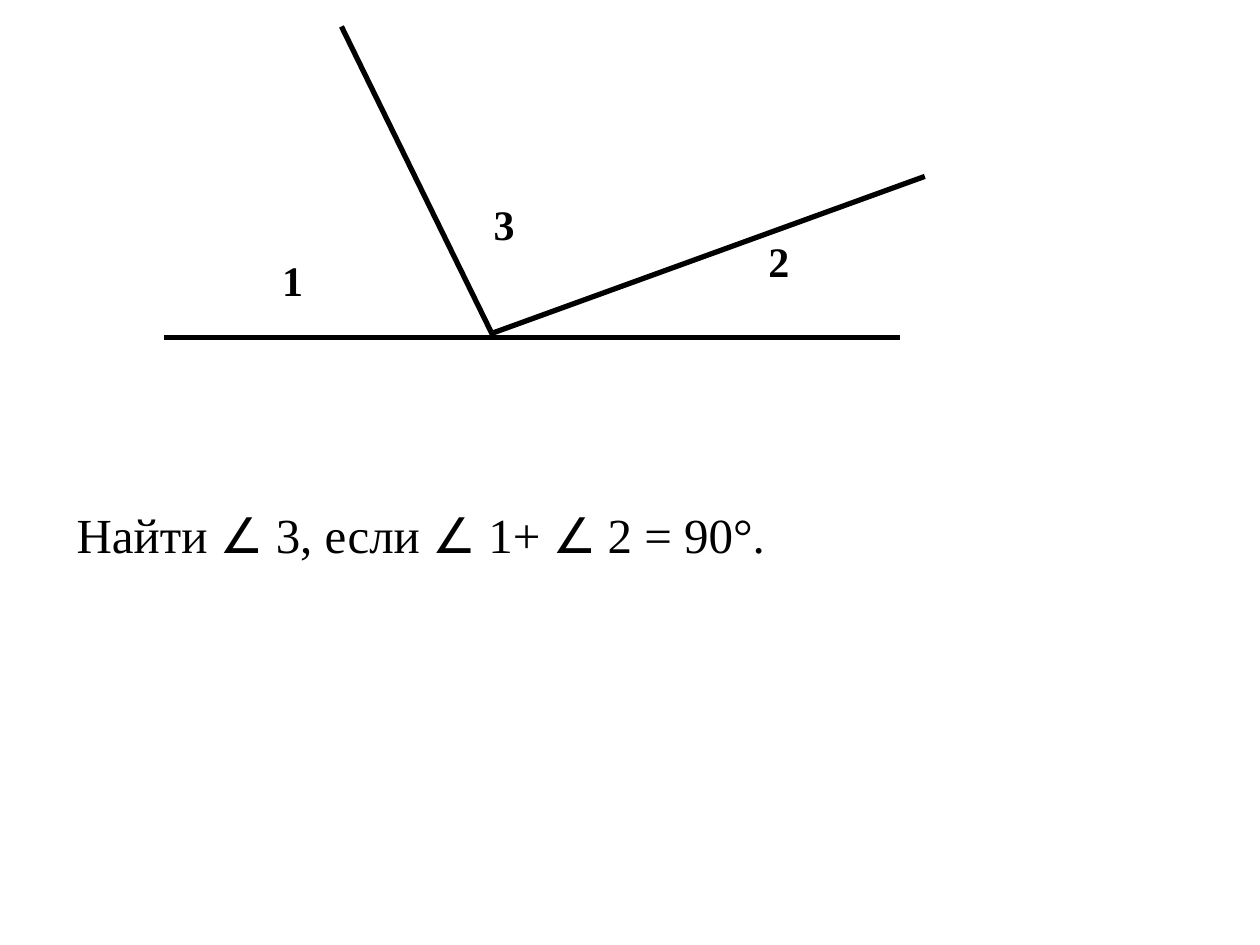
"""Builds a geometry slide: three angles on a straight line and a task."""
import pptx
import pptx.dml.color
import pptx.enum.shapes
import pptx.enum.text
import pptx.oxml.ns
import pptx.util
from lxml import etree

BLACK = pptx.dml.color.RGBColor(0, 0, 0)
WHITE = pptx.dml.color.RGBColor(255, 255, 255)
SERIF, SANS = "Times New Roman", "Calibri"

RAYS = [
    ((1.3, 2.68), (7.14, 2.68)),
    ((3.92, 2.68), (2.71, 0.21)),
    ((3.92, 2.64), (7.34, 1.4)),
]
ANGLES = [
    ("1", (2.14, 1.97, 1.34, 1.1)),
    ("3", (3.82, 1.53, 1.34, 0.5)),
    ("2", (6, 1.82, 1.68, 0.5)),
]
TASK = ["Найти ", "∠", " 3, если ", "∠", " 1+ ", "∠ ", "2 = 90°."]
TASK_PLACE = (0.51, 3.95, 5.71, 0.57)


def inches(values):
    return [pptx.util.Inches(value) for value in values]


def add_ray(shapes, start, end):
    ray = shapes.add_connector(
        pptx.enum.shapes.MSO_CONNECTOR.STRAIGHT, *inches(start + end))
    ray.line.color.rgb = BLACK
    ray.line.width = pptx.util.Pt(3)
    properties = ray._element.spPr
    etree.SubElement(properties, pptx.oxml.ns.qn("a:effectLst"))


def add_text(shapes, place, spans, size, wrap=True, bold=False):
    box = shapes.add_textbox(*inches(place))
    frame = box.text_frame
    frame.word_wrap = wrap
    frame.auto_size = pptx.enum.text.MSO_AUTO_SIZE.SHAPE_TO_FIT_TEXT
    para = frame.paragraphs[0]
    para.font.size = pptx.util.Pt(size)
    para.font.bold = bold
    para.font.name = SERIF
    para.font.color.rgb = BLACK
    for text in spans:
        span = para.add_run()
        span.text = text
        if "∠" in text:
            span.font.name = SANS
            span.font.italic = True
    return box


def main():
    deck = pptx.Presentation()
    deck.slide_width, deck.slide_height = inches((10, 7.5))
    page = deck.slides.add_slide(deck.slide_layouts[6])
    page.background.fill.solid()
    page.background.fill.fore_color.rgb = WHITE

    drawing = page.shapes.add_group_shape()
    for start, end in RAYS:
        add_ray(drawing.shapes, start, end)
    for label, place in ANGLES:
        add_text(drawing.shapes, place, [label], 24, bold=True)

    task = add_text(page.shapes, TASK_PLACE, TASK, 28, wrap=False)
    task.text_frame.vertical_anchor = pptx.enum.text.MSO_ANCHOR.MIDDLE
    deck.save("out.pptx")


if __name__ == "__main__":
    main()
